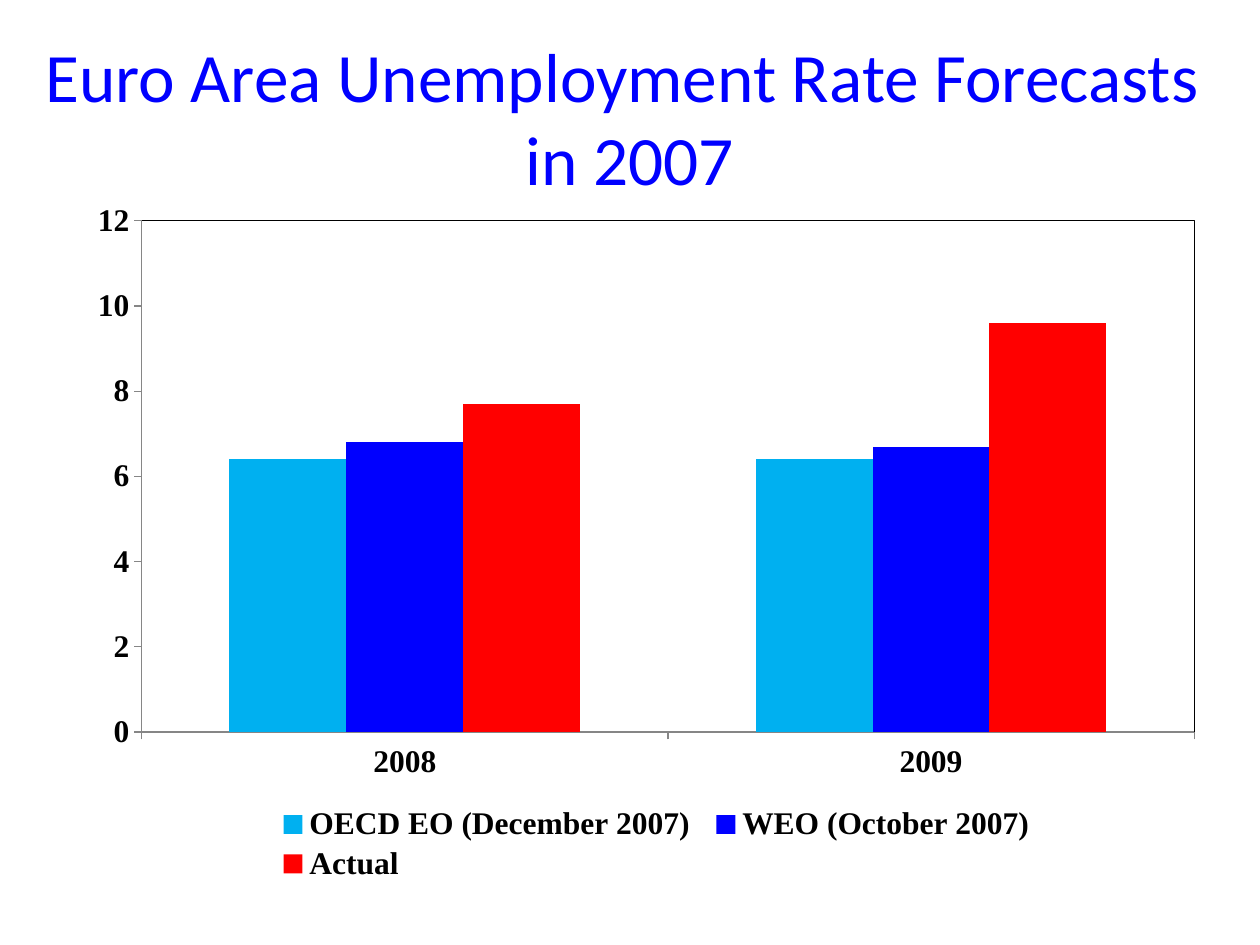
"""Build a slide that charts euro area unemployment forecasts."""
from lxml import etree
from pptx import Presentation
from pptx import util as u
from pptx.chart import data as cd
from pptx.dml.color import RGBColor
from pptx.enum import chart as ch, text as tx
from pptx.oxml import parse_xml
from pptx.oxml.ns import nsdecls, qn

HUES = {"sky": "00B0F0", "blue": "0000FF", "red": "FF0000",
        "black": "000000", "grey": "868686", "white": "FFFFFF"}
YEARS = ["2008", "2009"]
ROWS = [("OECD EO (December 2007)", (6.4, 6.4), "sky"),
        ("WEO (October 2007)", (6.8, 6.7), "blue"),
        ("Actual", (7.7, 9.6), "red")]


class Deck:
    """Hold the style and the current slide."""

    def __init__(self):
        """Start a deck with one title-only slide."""
        self.prs = Presentation()
        self.prs.slide_width, self.prs.slide_height = u.Inches(10), u.Inches(7.5)
        self.page = self.prs.slides.add_slide(self.prs.slide_layouts[5])
        fill = self.page.background.fill
        fill.solid()
        fill.fore_color.rgb = self.hue("white")

    def hue(self, name):
        """Return a named colour."""
        return RGBColor.from_string(HUES[name])

    def put(self, item, **form):
        """Set attributes from format values."""
        for key, val in form.items():
            setattr(item, key, val)

    def font(self, font, name, size, hue, bold):
        """Style a font."""
        self.put(font, name=name, size=u.Pt(size), bold=bold)
        font.color.rgb = self.hue(hue)

    def title(self, words, left, top, wide, high):
        """Fill and place the title."""
        box = self.page.shapes.title
        self.put(box, left=u.Inches(left), top=u.Inches(top),
                 width=u.Inches(wide), height=u.Inches(high))
        frame = box.text_frame
        self.put(frame, text=words, word_wrap=True, auto_size=tx.MSO_AUTO_SIZE.NONE,
                 vertical_anchor=tx.MSO_ANCHOR.MIDDLE)
        para = frame.paragraphs[0]
        para.alignment = tx.PP_ALIGN.CENTER
        for run in para.runs:
            self.font(run.font, "Calibri", 39.6, "blue", False)

    def layout(self, node, spot, inner, x, y, w, h):
        """Fix the place of a chart part as shares of the chart."""
        for old in node.findall(qn("c:layout")):
            node.remove(old)
        lay = etree.Element(qn("c:layout"))
        man = etree.SubElement(lay, qn("c:manualLayout"))
        parts = [("layoutTarget", "inner")] if inner else []
        parts += [("xMode", "edge"), ("yMode", "edge"),
                  ("x", x), ("y", y), ("w", w), ("h", h)]
        for tag, val in parts:
            etree.SubElement(man, qn("c:" + tag)).set("val", str(val))
        node.insert(spot, lay)

    def axis(self, axis):
        """Style an axis."""
        self.put(axis, has_major_gridlines=False,
                 major_tick_mark=ch.XL_TICK_MARK.OUTSIDE,
                 minor_tick_mark=ch.XL_TICK_MARK.NONE)
        line = axis.format.line
        line.width = u.Pt(0.75)
        line.color.rgb = self.hue("grey")

    def bars(self, cats, rows, *box):
        """Add a clustered column chart."""
        data = cd.CategoryChartData(number_format="General")
        data.categories = cats
        for name, vals, _ in rows:
            data.add_series(name, vals)
        kind = ch.XL_CHART_TYPE.COLUMN_CLUSTERED
        chart = self.page.shapes.add_chart(kind, *map(u.Inches, box), data).chart
        self.put(chart, has_title=False, has_legend=True)
        self.font(chart.font, "Times New Roman", 18, "black", True)
        plot = chart.plots[0]
        self.put(plot, gap_width=150, overlap=0, vary_by_categories=False)
        for bar, row in zip(plot.series, rows):
            bar.format.fill.solid()
            bar.format.fill.fore_color.rgb = self.hue(row[2])
        for axis in (chart.category_axis, chart.value_axis):
            self.axis(axis)
        self.put(chart.value_axis, minimum_scale=0, maximum_scale=12, major_unit=2)
        self.put(chart.legend, include_in_layout=False,
                 position=ch.XL_LEGEND_POSITION.BOTTOM)
        area = chart.element.find(".//" + qn("c:plotArea"))
        self.layout(area, 0, True, 0.06, 0.04, 0.92, 0.73)
        self.layout(chart.legend._element, 1, False, 0.17, 0.87, 0.68, 0.12)
        area.append(parse_xml(
            f'<c:spPr {nsdecls("c", "a")}><a:noFill/><a:ln w="9525"><a:solidFill>'
            f'<a:srgbClr val="{HUES["black"]}"/></a:solidFill></a:ln></c:spPr>'))


def main():
    """Build and save the slide."""
    deck = Deck()
    deck.title("Euro Area Unemployment Rate Forecasts \vin 2007", 0, 0.3, 10, 1.25)
    deck.bars(YEARS, ROWS, 0.58, 1.53, 9.08, 5.56)
    deck.prs.save("out.pptx")


if __name__ == "__main__":
    main()
